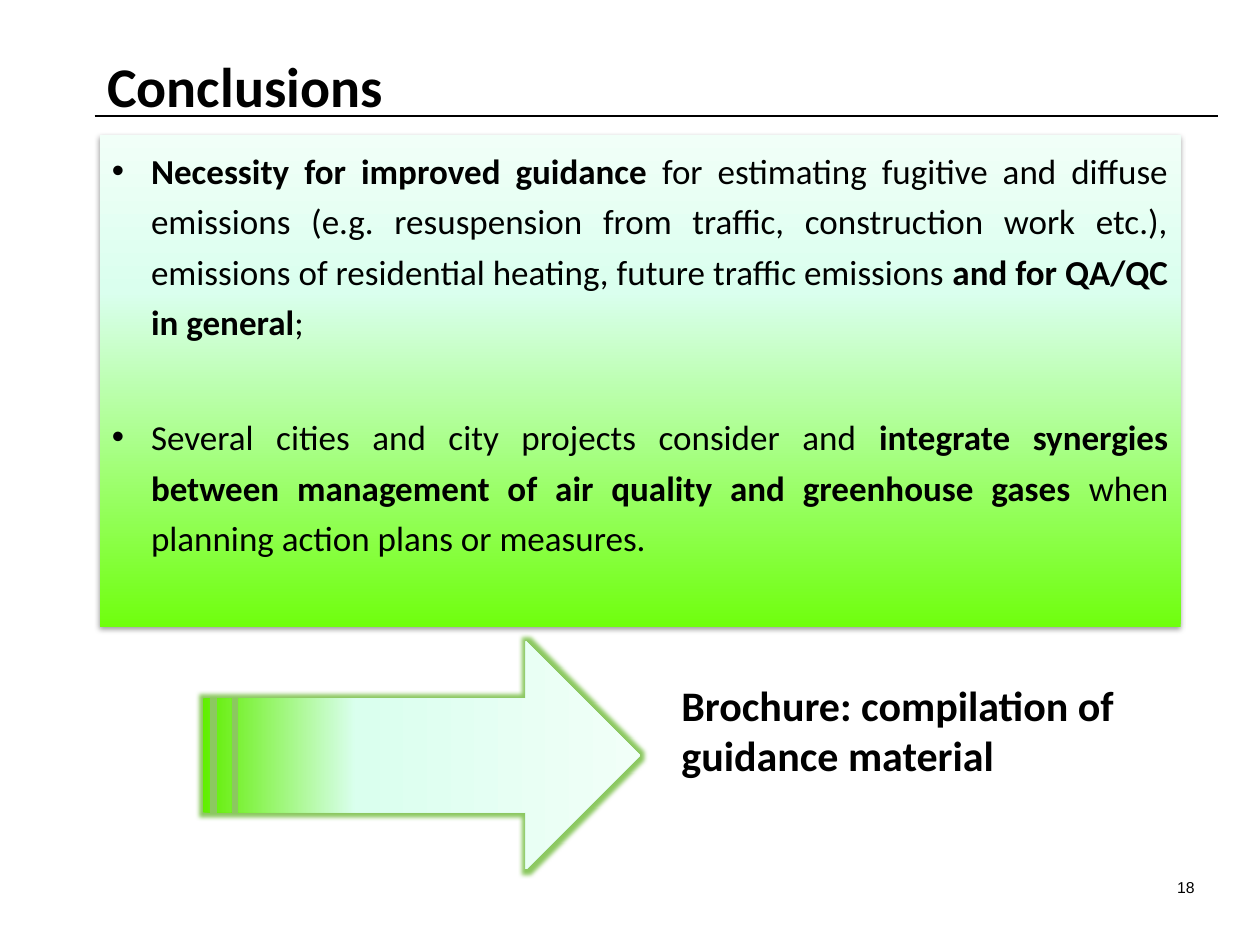
"""Build the Conclusions slide with its green panel, arrow and brochure note."""
from lxml.etree import SubElement
from pptx import Presentation
from pptx.dml.color import RGBColor
from pptx.enum.shapes import MSO_CONNECTOR, MSO_SHAPE
from pptx.enum.text import MSO_ANCHOR, MSO_AUTO_SIZE, PP_ALIGN
from pptx.oxml import parse_xml
from pptx.oxml.ns import nsdecls, qn
from pptx.util import Inches, Pt

INK = {"black": "000000", "lime": "6FFF0D", "green": "60EE00",
       "mint": "DAFFEE", "pale": "F1FFF8", "glow": "7FC24F"}
BLACK = RGBColor.from_string(INK["black"])

deck = Presentation()
deck.slide_width, deck.slide_height = Inches(10), Inches(7.5)
col, row = deck.slide_width / 100, deck.slide_height / 75
slide = deck.slides.add_slide(deck.slide_layouts[5])
shapes = slide.shapes


def place(x, y, w, h):
    return int(x * col), int(y * row), int(w * col), int(h * row)


def write(para, runs, size, face="Calibri", **form):
    for key, value in form.items():
        setattr(para, key, value)
    for text, bold in runs:
        run = para.add_run()
        run.text = text
        for key, value in {"size": Pt(size), "name": face, "bold": bold}.items():
            setattr(run.font, key, value)
        run.font.color.rgb = BLACK


rule = shapes.add_connector(MSO_CONNECTOR.STRAIGHT, int(7.5 * col), int(9.2 * row),
                            int(96.7 * col), int(9.2 * row))
rule.line.color.rgb = BLACK
rule.line.width = Pt(0.75)
SubElement(rule._element.spPr, qn("a:effectLst"))

title = shapes.title
spot = zip(("left", "top", "width", "height"), place(7.5, 2.9, 81.2, 7))
for key, value in spot:
    setattr(title, key, value)
for key, value in {"vertical_anchor": MSO_ANCHOR.BOTTOM, "word_wrap": True,
                   "auto_size": MSO_AUTO_SIZE.NONE}.items():
    setattr(title.text_frame, key, value)
write(title.text_frame.paragraphs[0], [("Conclusions", True)], 32,
      alignment=PP_ALIGN.LEFT)

shadow = ('<a:outerShdw blurRad="39400" dist="20300" dir="5400000" rotWithShape="0">'
          f'<a:srgbClr val="{INK["black"]}"><a:alpha val="38000"/></a:srgbClr></a:outerShdw>')
halo = (f'<a:glow rad="63500"><a:srgbClr val="{INK["glow"]}">'
        '<a:alpha val="90000"/></a:srgbClr></a:glow>')
forms = [
    (MSO_SHAPE.RECTANGLE, (7.9, 10.7, 85.8, 39.1), "lime", 68, 270, shadow),
    (MSO_SHAPE.STRIPED_RIGHT_ARROW, (16.1, 50.9, 34.7, 18.1), "green", 35, 0, halo),
]
made = []
for kind, area, start, mid, angle, effect in forms:
    shape = shapes.add_shape(kind, *place(*area))
    shape.line.fill.background()
    stops = "".join(f'<a:gs pos="{pos * 1000}"><a:srgbClr val="{INK[tone]}"/></a:gs>'
                    for pos, tone in ((0, start), (mid, "mint"), (100, "pale")))
    props = shape._element.spPr
    props.find(qn("a:prstGeom")).addnext(parse_xml(
        f'<a:gradFill {nsdecls("a")} rotWithShape="1"><a:gsLst>{stops}</a:gsLst>'
        f'<a:lin ang="{angle * 60000}" scaled="0"/></a:gradFill>'))
    props.append(parse_xml(f'<a:effectLst {nsdecls("a")}>{effect}</a:effectLst>'))
    made.append(shape)

points = [
    [("Necessity for improved guidance ", True),
     ("for estimating fugitive and diffuse emissions (e.g. resuspension from traffic, "
      "construction work etc.), emissions of residential heating, future traffic "
      "emissions ", False),
     ("and for QA/QC in general", True), (";", False)],
    [("Several cities and city projects consider and ", False),
     ("integrate synergies between management of air quality and greenhouse gases ", True),
     ("when planning action plans or measures.", False)],
]
frame = made[0].text_frame
frame.word_wrap = True
frame.vertical_anchor = MSO_ANCHOR.TOP
for num, runs in enumerate(points):
    para = frame.add_paragraph() if num else frame.paragraphs[0]
    props = para._p.get_or_add_pPr()
    props.set("marL", str(Inches(0.31)))
    props.set("indent", str(-Inches(0.31)))
    SubElement(props, qn("a:buFont"), typeface="Arial")
    SubElement(props, qn("a:buChar"), char="•")
    write(para, runs, 20, alignment=PP_ALIGN.JUSTIFY, line_spacing=1.2,
          space_before=Pt(37 * num))

notes = [
    ((53.1, 53.4, 40.6, 9.1), "Brochure: compilation of guidance material",
     24, "Calibri", True, PP_ALIGN.LEFT),
    ((75, 69.2, 20.8, 2.5), "18", 9, "Arial", False, PP_ALIGN.RIGHT),
]
for area, text, size, face, bold, side in notes:
    box = shapes.add_textbox(*place(*area))
    box.text_frame.word_wrap = True
    write(box.text_frame.paragraphs[0], [(text, bold)], size, face, alignment=side)

deck.save("out.pptx")
